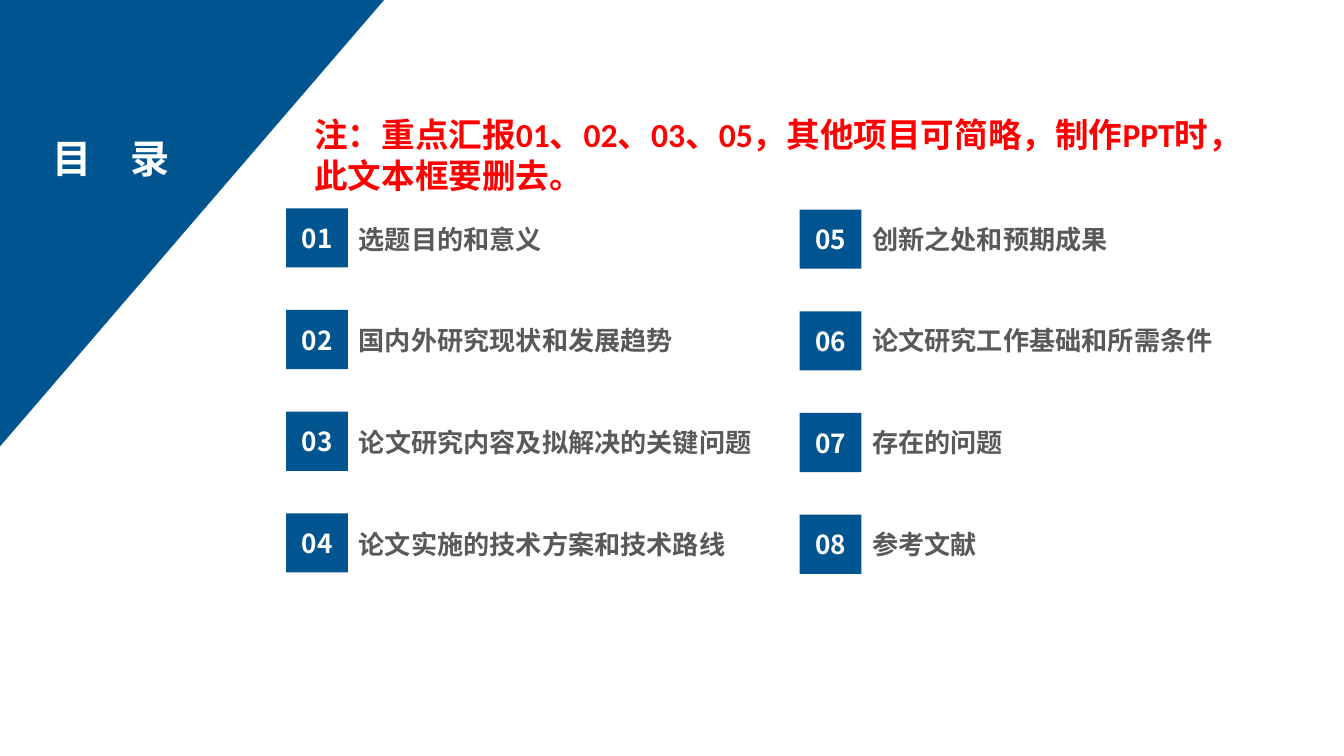
from typing import NamedTuple

from lxml import etree
from pptx import Presentation
from pptx.dml.color import RGBColor
from pptx.enum import shapes, text
from pptx.oxml.ns import qn
from pptx.util import Inches, Pt

BLUE, GREY, WHITE, RED = "005490", "595959", "FFFFFF", "FF0000"
HAN = "Noto Sans CJK SC"
ROW = 2.27 / 3
LABEL_TOP = 1.61


class Item(NamedTuple):
    label: str
    width: float = 3.14


class Column(NamedTuple):
    left: float
    top: float
    first: int
    items: list[Item]


COLUMNS = [
    Column(2.13, 1.55, 1, [
        Item("选题目的和意义"),
        Item("国内外研究现状和发展趋势"),
        Item("论文研究内容及拟解决的关键问题", 3.41),
        Item("论文实施的技术方案和技术路线"),
    ]),
    Column(5.95, 1.56, 5, [
        Item("创新之处和预期成果"),
        Item("论文研究工作基础和所需条件", 3.32),
        Item("存在的问题"),
        Item("参考文献"),
    ]),
]


def color(code: str) -> RGBColor:
    return RGBColor.from_string(code)


def write(shape, words: str, size: float, face: str, ink: str, align=text.PP_ALIGN.LEFT,
          anchor=text.MSO_ANCHOR.TOP, wrap: bool = True) -> None:
    frame = shape.text_frame
    frame.text = words
    frame.word_wrap = wrap
    frame.auto_size = text.MSO_AUTO_SIZE.NONE
    frame.vertical_anchor = anchor
    para = frame.paragraphs[0]
    para.alignment = align
    font = para.font
    font.size, font.bold, font.name = Pt(size), True, face
    font.color.rgb = color(ink)
    props = para._p.pPr.find(qn("a:defRPr"))
    etree.SubElement(props, qn("a:ea"), typeface=HAN)


def block(slide, left: float, top: float, width: float, height: float):
    """Add a plain blue rectangle."""
    shape = slide.shapes.add_shape(shapes.MSO_SHAPE.RECTANGLE, Inches(left), Inches(top),
                                   Inches(width), Inches(height))
    shape.shadow.inherit = False
    shape.fill.solid()
    shape.fill.fore_color.rgb = color(BLUE)
    shape.line.fill.background()
    return shape


def box(slide, left: float, top: float, width: float, height: float):
    return slide.shapes.add_textbox(Inches(left), Inches(top), Inches(width), Inches(height))


def entry(slide, col: Column, row: int, item: Item) -> None:
    """Draw a numbered square and its label."""
    square = block(slide, col.left, col.top + row * ROW, 0.46, 0.44)
    write(square, f"{col.first + row:02}", 14, HAN, WHITE,
          text.PP_ALIGN.CENTER, text.MSO_ANCHOR.MIDDLE)
    label = box(slide, col.left + 0.25, LABEL_TOP + row * ROW, item.width, 0.34)
    label.text_frame.margin_left = Inches(0.29)
    write(label, item.label, 14, HAN, GREY)


def main() -> None:
    deck = Presentation()
    deck.slide_width = Inches(10)
    deck.slide_height = deck.slide_width * 9 // 16
    slide = deck.slides.add_slide(deck.slide_layouts[5])

    corner = block(slide, -0.41, -1.56, 2.21, 4.76)
    corner.rotation = 40.7
    title = slide.shapes.title
    corner._element.addnext(title._element)
    title.left, title.top = Inches(0.28), Inches(0.95)
    title.width, title.height = Inches(1.09), Inches(0.45)
    write(title, "目　录", 21, "Calibri", WHITE, text.PP_ALIGN.CENTER, wrap=False)

    for col in COLUMNS:
        for row, item in enumerate(col.items):
            entry(slide, col, row, item)

    note = box(slide, 2.24, 0.8, 6.9, 0.71)
    write(note, "注：重点汇报01、02、03、05，其他项目可简略，制作PPT时，此文本框要删去。",
          18, "Calibri", RED)
    deck.save("out.pptx")


if __name__ == "__main__":
    main()
